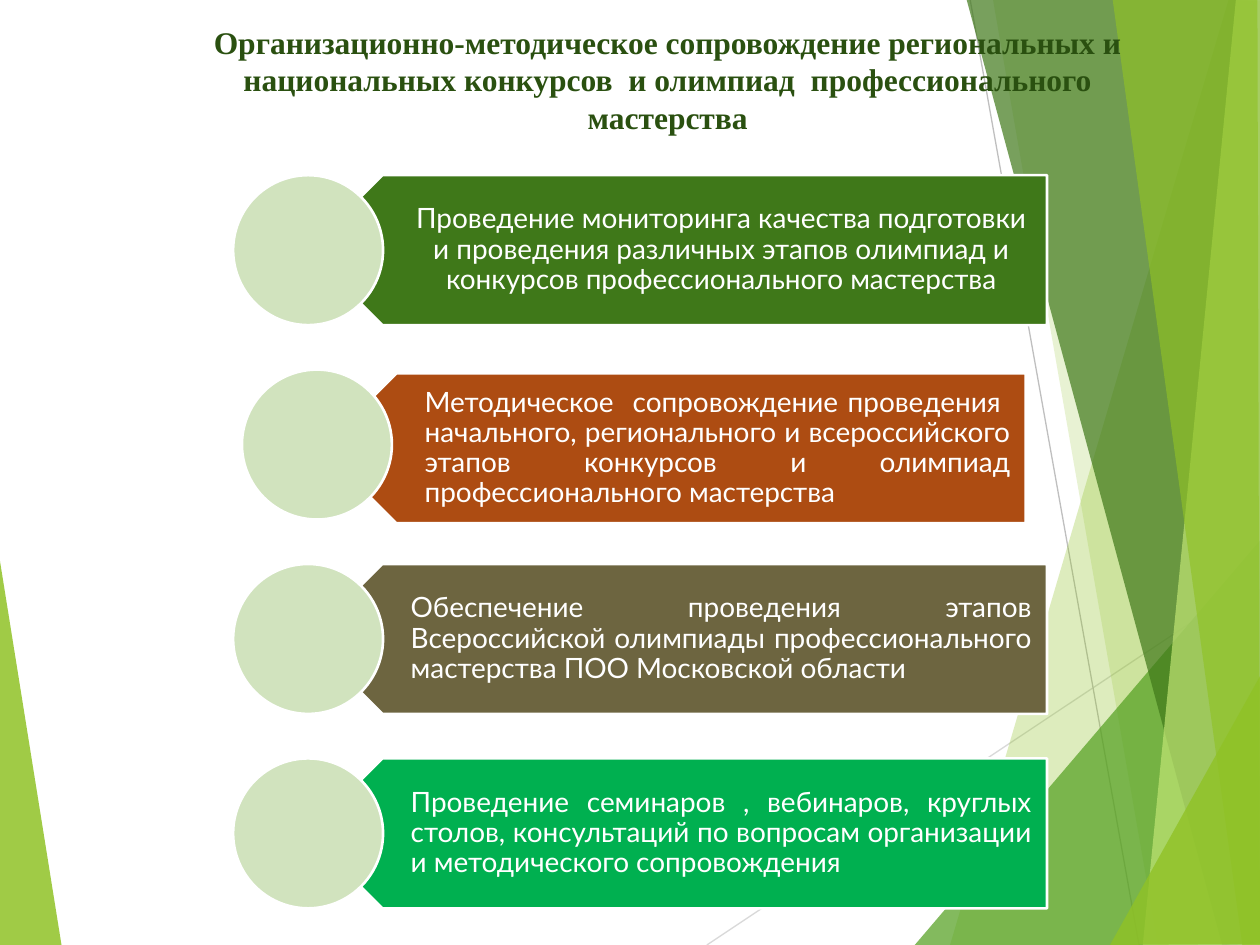
"""Build a slide listing four kinds of support for professional skills contests."""
from lxml.etree import SubElement
from pptx import Presentation
from pptx.dml.color import RGBColor
from pptx.enum.shapes import MSO_CONNECTOR, MSO_SHAPE
from pptx.enum.text import MSO_ANCHOR, MSO_AUTO_SIZE, PP_ALIGN
from pptx.oxml.ns import qn
from pptx.util import Inches, Pt

WHITE = RGBColor(0xFF, 0xFF, 0xFF)
LIME = RGBColor(0x90, 0xC2, 0x26)
PALE_LIME = RGBColor(0xC0, 0xE4, 0x74)
GREEN = RGBColor(0x54, 0xA0, 0x21)
DARK_GREEN = RGBColor(0x3F, 0x78, 0x19)
TITLE_GREEN = RGBColor(0x2A, 0x50, 0x10)
PALE_GREEN = RGBColor(0xD1, 0xE3, 0xBE)
RUST = RGBColor(0xAD, 0x4C, 0x12)
OLIVE = RGBColor(0x6D, 0x65, 0x40)
EMERALD = RGBColor(0x00, 0xB0, 0x50)
LIGHT_GRAY = RGBColor(0xD9, 0xD9, 0xD9)
GRAY = RGBColor(0xBF, 0xBF, 0xBF)

TITLE = ("Организационно-методическое сопровождение региональных и национальных "
         "конкурсов  и олимпиад  профессионального мастерства")

WIDE = {"circle_left": 1.85, "arrow_left": 2.44, "arrow_width": 5.87, "drop": 0}
NARROW = {"circle_left": 1.92, "arrow_left": 2.55, "arrow_width": 5.59, "drop": 0.03}
ACTIVITIES = [
    ("Проведение мониторинга качества подготовки и проведения различных этапов "
     "олимпиад и конкурсов профессионального мастерства",
     DARK_GREEN, PP_ALIGN.CENTER, WIDE),
    ("Методическое  сопровождение проведения  начального, регионального и "
     "всероссийского этапов конкурсов и олимпиад профессионального мастерства",
     RUST, PP_ALIGN.JUSTIFY, NARROW),
    ("Обеспечение проведения этапов Всероссийской олимпиады профессионального "
     "мастерства ПОО Московской области",
     OLIVE, PP_ALIGN.JUSTIFY, WIDE),
    ("Проведение семинаров , вебинаров, круглых столов, консультаций по вопросам "
     "организации и методического сопровождения",
     EMERALD, PP_ALIGN.JUSTIFY, WIDE),
]
FIRST_TOP, ROW_STEP, ROW_HEIGHT = 1.39, 1.543, 1.19

LEFT_FACET = ([(-0.01, 4.39), (0.49, 7.51), (-0.01, 7.5)], LIME, 85)
RAYS = [((5.61, 7.5), (10.01, 4.57), LIGHT_GRAY), ((7.7, 0), (9.04, 7.5), GRAY)]
RIGHT_FACETS = [
    ([(9.75, 0), (7.54, 7.5), (10.02, 7.51), (10.01, 0.01)], LIME, 30),
    ([(7.88, -0.01), (9.19, 7.5), (10.01, 7.5), (10.01, -0.01)], LIME, 20),
    ([(7.26, 7.5), (10, 4.29), (10.01, 7.5)], GREEN, 72),
    ([(7.67, -0.01), (9.7, 7.5), (10.01, 7.49), (10.01, -0.01)], DARK_GREEN, 70),
    ([(9.81, -0.01), (9.07, 7.5), (10.01, 7.5), (10, -0.01)], PALE_LIME, 70),
    ([(8.83, -0.01), (9.86, 7.5), (10, 7.5), (9.98, -0.01)], LIME, 65),
    ([(8.81, 7.5), (10.01, 5.35), (10.01, 7.49)], LIME, 80),
]


def add_facet(shapes, corners, color, opacity):
    points = [(Inches(x), Inches(y)) for x, y in corners]
    builder = shapes.build_freeform(*points[0], scale=1.0)
    builder.add_line_segments(points[1:], close=True)
    facet = builder.convert_to_shape()
    facet.shadow.inherit = False
    facet.fill.solid()
    facet.fill.fore_color.rgb = color
    facet.line.fill.background()
    color_node = facet.element.spPr.find(qn("a:solidFill"))[0]
    SubElement(color_node, qn("a:alpha")).set("val", str(opacity * 1000))


def add_ray(shapes, start, end, color):
    ray = shapes.add_connector(MSO_CONNECTOR.STRAIGHT,
                               *[Inches(value) for value in start + end])
    ray.line.color.rgb = color
    ray.line.width = Pt(0.75)
    SubElement(ray.element.spPr, qn("a:effectLst"))


def add_outlined(shapes, preset, left, top, width, color):
    shape = shapes.add_shape(preset, Inches(left), Inches(top),
                             Inches(width), Inches(ROW_HEIGHT))
    shape.shadow.inherit = False
    shape.fill.solid()
    shape.fill.fore_color.rgb = color
    shape.line.color.rgb = WHITE
    shape.line.width = Pt(1.5)
    return shape


def style_text(paragraph, align, font_name, size, color, bold=False):
    paragraph.alignment = align
    font = paragraph.runs[0].font
    font.name, font.size, font.bold = font_name, Pt(size), bold
    font.color.rgb = color


def add_activity(shapes, index, wording, color, align, row):
    top = FIRST_TOP + index * ROW_STEP
    arrow_top = top + row["drop"]
    arrow = add_outlined(shapes, MSO_SHAPE.PENTAGON, row["arrow_left"], arrow_top,
                         row["arrow_width"], color)
    arrow.rotation = 180
    label = shapes.add_textbox(Inches(row["arrow_left"] + 0.3), Inches(arrow_top),
                               Inches(row["arrow_width"] - 0.3), Inches(ROW_HEIGHT))
    frame = label.text_frame
    frame.word_wrap = True
    frame.vertical_anchor = MSO_ANCHOR.MIDDLE
    frame.margin_left, frame.margin_right = Inches(0.52), Inches(0.12)
    frame.margin_top = frame.margin_bottom = Inches(0.07)
    frame.text = wording
    frame.paragraphs[0].line_spacing = 0.9
    style_text(frame.paragraphs[0], align, "Lato", 16, WHITE)
    add_outlined(shapes, MSO_SHAPE.OVAL, row["circle_left"], top, ROW_HEIGHT, PALE_GREEN)


def main():
    presentation = Presentation()
    presentation.slide_width, presentation.slide_height = Inches(10), Inches(7.5)
    slide = presentation.slides.add_slide(presentation.slide_layouts[5])
    shapes = slide.shapes

    add_facet(shapes, *LEFT_FACET)
    for ray in RAYS:
        add_ray(shapes, *ray)
    for facet in RIGHT_FACETS:
        add_facet(shapes, *facet)

    title = shapes.title
    title.element.getparent().append(title.element)
    title.left, title.top = Inches(1.42), Inches(0.13)
    title.width, title.height = Inches(7.76), Inches(0.94)
    frame = title.text_frame
    frame.text = TITLE
    frame.word_wrap = True
    frame.auto_size = MSO_AUTO_SIZE.NONE
    frame.vertical_anchor = MSO_ANCHOR.TOP
    style_text(frame.paragraphs[0], PP_ALIGN.CENTER, "Times New Roman", 18,
               TITLE_GREEN, bold=True)

    for index, activity in enumerate(ACTIVITIES):
        add_activity(shapes, index, *activity)
    presentation.save("out.pptx")


if __name__ == "__main__":
    main()
